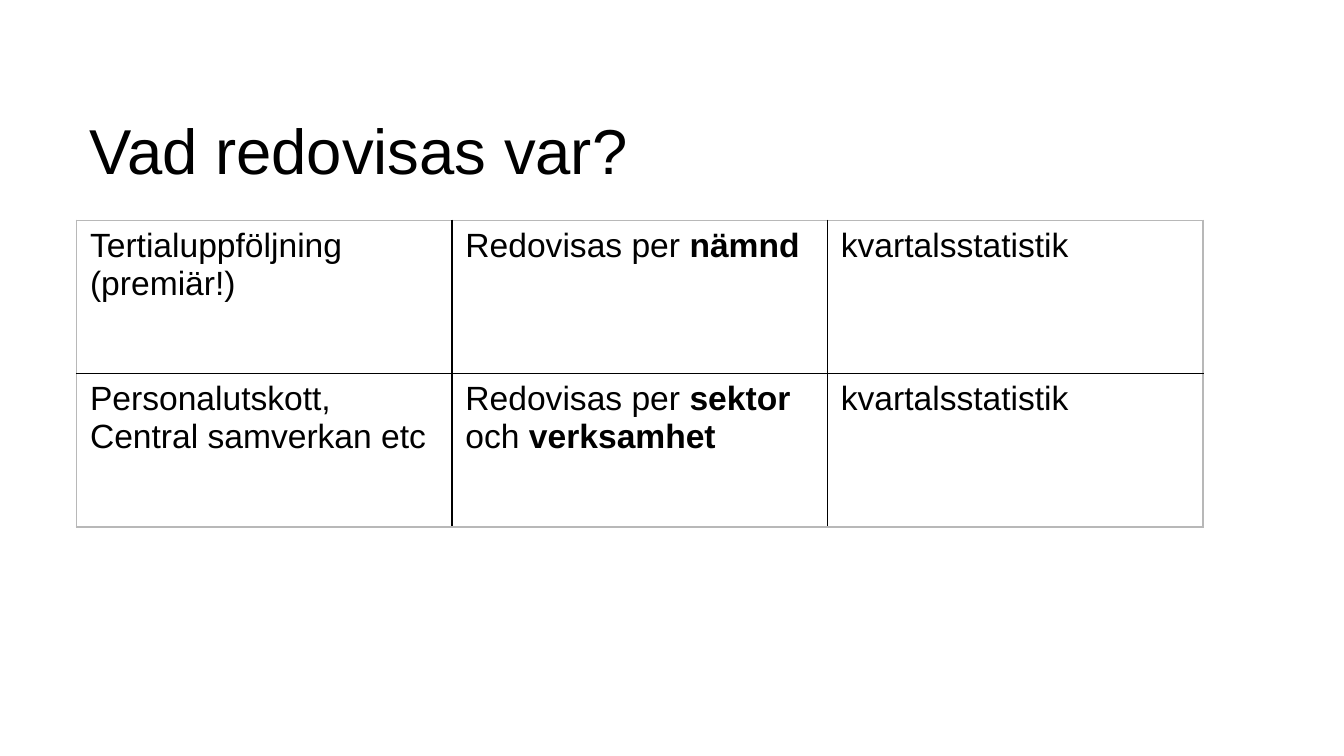
from lxml import etree
from pptx import Presentation
from pptx import util as u
from pptx.dml.color import RGBColor
from pptx.enum import text as t
from pptx.oxml.ns import qn

# Content: rows > cells > paragraphs > (words, bold)
TITLE = "Vad redovisas var?"
STAT = [[("kvartalsstatistik", False)]]
ROWS = [
    [
        [[("Tertialuppföljning", False)], [("(premiär!)", False)]],
        [[("Redovisas per ", False), ("nämnd", True)]],
        STAT,
    ],
    [
        [[("Personalutskott, Central samverkan etc", False)]],
        [[("Redovisas per ", False), ("sektor ", True),
          ("och", False), (" verksamhet", True)]],
        STAT,
    ],
]
COLORS = {"ink": "000000", "edge": "B8B8B8"}
FONT = "Arial"

# Layout in inches, on a 16:9 slide
WIDTH = 10
HEIGHT = WIDTH * 9 / 16
LEFT, TOP = 0.57, 1.64
SPAN, ROW = 8.38, 1.14


def style(font, size, bold=False):
    font.name, font.size, font.bold = FONT, u.Pt(size), bold
    font.color.rgb = RGBColor.from_string(COLORS["ink"])


def border(cell, sides):
    props = cell._tc.get_or_add_tcPr()
    for i, (side, outer) in enumerate(sides.items()):
        line = etree.Element(qn("a:" + side), w=str(u.Pt(1)))
        fill = etree.SubElement(line, qn("a:solidFill"))
        etree.SubElement(fill, qn("a:srgbClr"),
                         val=COLORS["edge" if outer else "ink"])
        props.insert(i, line)


prs = Presentation()
prs.slide_width, prs.slide_height = u.Inches(WIDTH), u.Inches(HEIGHT)
slide = prs.slides.add_slide(prs.slide_layouts[6])

# Title
box = slide.shapes.add_textbox(
    u.Inches(LEFT), u.Inches(0.78), u.Inches(7.06), u.Inches(0.5))
frame = box.text_frame
frame.word_wrap = True
frame.auto_size = t.MSO_AUTO_SIZE.NONE
frame.vertical_anchor = t.MSO_ANCHOR.TOP
frame.margin_top = frame.margin_bottom = u.Inches(0.05)
frame.text = TITLE
style(frame.paragraphs[0].runs[0].font, 34)

# Table
rows, cols = len(ROWS), len(ROWS[0])
table = slide.shapes.add_table(
    rows, cols, u.Inches(LEFT), u.Inches(TOP),
    u.Inches(SPAN), u.Inches(rows * ROW)).table
table.first_row = table.horz_banding = False
for col in table.columns:
    col.width = u.Inches(SPAN / cols)
for row in table.rows:
    row.height = u.Inches(ROW)

for r, row in enumerate(ROWS):
    for c, paras in enumerate(row):
        cell = table.cell(r, c)
        cell.fill.background()
        border(cell, {"lnL": c == 0, "lnR": c == cols - 1,
                      "lnT": r == 0, "lnB": r == rows - 1})
        frame = cell.text_frame
        for i, parts in enumerate(paras):
            para = frame.add_paragraph() if i else frame.paragraphs[0]
            for words, bold in parts:
                run = para.add_run()
                run.text = words
                style(run.font, 18, bold)

prs.save("out.pptx")
